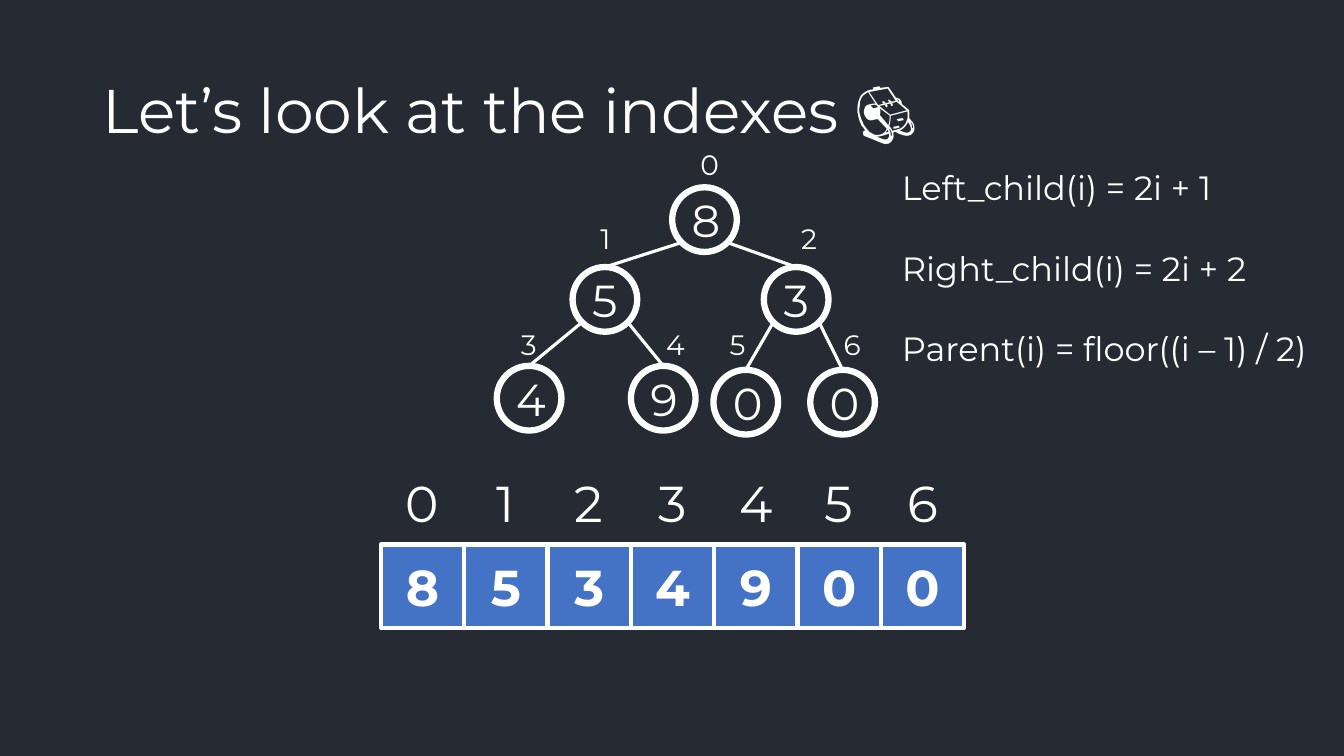
from dataclasses import dataclass
from math import sqrt

from lxml import etree
from pptx import Presentation
from pptx.dml.color import RGBColor
from pptx.enum.shapes import MSO_CONNECTOR, MSO_SHAPE
from pptx.enum.text import MSO_ANCHOR, PP_ALIGN
from pptx.oxml.ns import qn
from pptx.util import Cm, Pt

ELLIPSE, RECT = MSO_SHAPE.OVAL, MSO_SHAPE.RECTANGLE
STRAIGHT = MSO_CONNECTOR.STRAIGHT
TOP, MIDDLE = MSO_ANCHOR.TOP, MSO_ANCHOR.MIDDLE
LEFT, CENTER = PP_ALIGN.LEFT, PP_ALIGN.CENTER


@dataclass(frozen=True)
class Theme:
    font: str = "Montserrat"
    back: RGBColor = RGBColor(0x26, 0x2A, 0x33)
    ink: RGBColor = RGBColor(0xFF, 0xFF, 0xFF)
    cell: RGBColor = RGBColor(0x44, 0x72, 0xC4)
    title: int = 44
    array: int = 36
    node: int = 32
    formula: int = 24
    index: int = 20
    node_line: float = 4.5
    cell_line: float = 3
    edge_line: float = 2.25


class Deck:
    """Holds the theme and the slide being drawn; all lengths are in cm."""

    def __init__(self, prs, theme):
        self.theme = theme
        self.s = prs.slides.add_slide(prs.slide_layouts[6])
        fill = self.s.background.fill
        fill.solid()
        fill.fore_color.rgb = theme.back

    def set_text(self, sp, lines, size, align=CENTER, anchor=MIDDLE, wrap=True,
                 bold=False, **spacing):
        """Put lines into a shape; spacing holds paragraph attributes."""
        tf = sp.text_frame
        tf.word_wrap = wrap
        tf.vertical_anchor = anchor
        font = {"name": self.theme.font, "size": Pt(size), "bold": bold}
        for i, line in enumerate(lines):
            p = tf.paragraphs[0] if i == 0 else tf.add_paragraph()
            for name, value in {"alignment": align, **spacing}.items():
                setattr(p, name, value)
            r = p.add_run()
            r.text = line
            for name, value in font.items():
                setattr(r.font, name, value)
            r.font.color.rgb = self.theme.ink

    def text(self, box, lines, size, **fmt):
        sp = self.s.shapes.add_textbox(*map(Cm, box))
        self.set_text(sp, lines, size, **fmt)

    def shape(self, kind, box, value, size, line, fill=None, **fmt):
        sp = self.s.shapes.add_shape(kind, *map(Cm, box))
        sp.shadow.inherit = False
        if fill is None:
            sp.fill.background()
        else:
            sp.fill.solid()
            sp.fill.fore_color.rgb = fill
        sp.line.color.rgb = self.theme.ink
        sp.line.width = Pt(line)
        self.set_text(sp, [value], size, **fmt)

    def edge(self, start, end):
        line = self.s.shapes.add_connector(STRAIGHT, *map(Cm, start + end))
        line.line.color.rgb = self.theme.ink
        line.line.width = Pt(self.theme.edge_line)
        etree.SubElement(line._element.spPr, qn("a:effectLst"))


HEAP = "8534900"
NODE = 1.63
NODE_AT = [(16.94, 4.72), (14.43, 6.73), (19.25, 6.73), (12.52, 9.22),
           (15.9, 9.22), (17.98, 9.32), (20.42, 9.32)]
INDEX_AT = [(17.4, 3.61), (14.88, 5.46), (19.94, 5.46), (12.88, 8.13),
            (16.54, 8.13), (18.14, 8.13), (21.01, 8.13)]
CELL = 2.1
ARRAY_LEFT, ARRAY_TOP = 9.6, 13.72
FORMULAS = ["Left_child(i) = 2i + 1", "Right_child(i) = 2i + 2",
            "Parent(i) = floor((i – 1) / 2)"]


def draw_tree(deck):
    t = deck.theme
    radius = NODE / 2
    diagonal = radius / sqrt(2)
    for i, (x, y) in enumerate(NODE_AT):
        if i:
            px, py = NODE_AT[(i - 1) // 2]
            side = -1 if i % 2 else 1
            start = (px + radius + side * diagonal, py + radius + diagonal)
            deck.edge(start, (x + radius, y))
        deck.shape(ELLIPSE, (x, y, NODE, NODE), HEAP[i], t.node, t.node_line)
        deck.text((*INDEX_AT[i], 0.69, 1.07), [str(i)], t.index)


def draw_array(deck):
    t = deck.theme
    for i, value in enumerate(HEAP):
        x = ARRAY_LEFT + i * CELL
        deck.shape(RECT, (x, ARRAY_TOP, CELL, CELL), value, t.array,
                   t.cell_line, fill=t.cell, bold=True)
        deck.text((x, ARRAY_TOP - CELL, CELL, CELL), [str(i)], t.array)


def main():
    prs = Presentation()
    prs.slide_width, prs.slide_height = Cm(33.87), Cm(19.05)
    deck = Deck(prs, Theme())
    deck.text((2.33, 1.01, 29.21, 3.68), ["Let’s look at the indexes 📇"],
              deck.theme.title, align=LEFT, line_spacing=0.9)
    draw_tree(deck)
    draw_array(deck)
    deck.text((22.48, 4.09, 10.82, 5.38), FORMULAS, deck.theme.formula,
              align=LEFT, anchor=TOP, wrap=False, space_after=Pt(28.5))
    prs.save("out.pptx")


if __name__ == "__main__":
    main()
